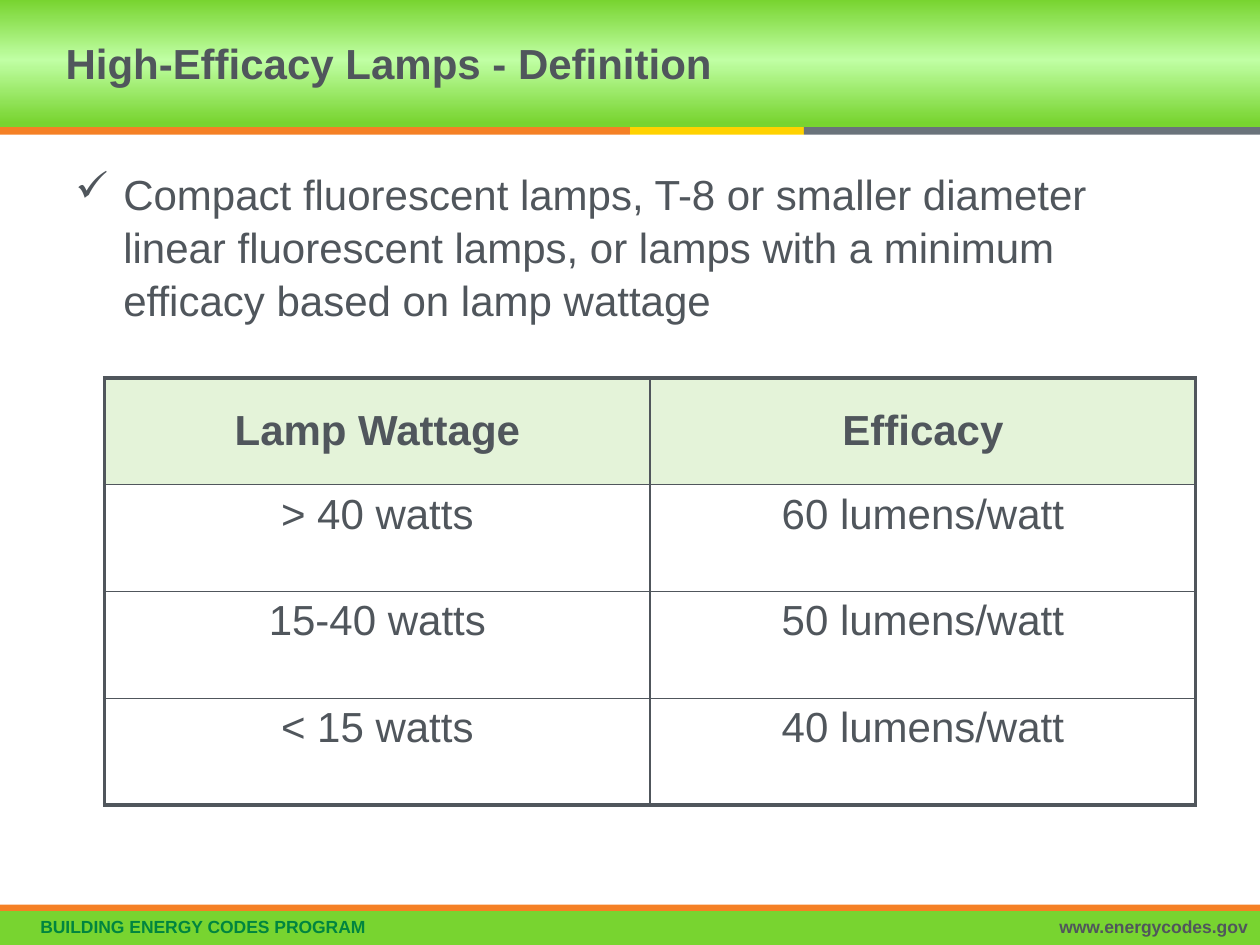
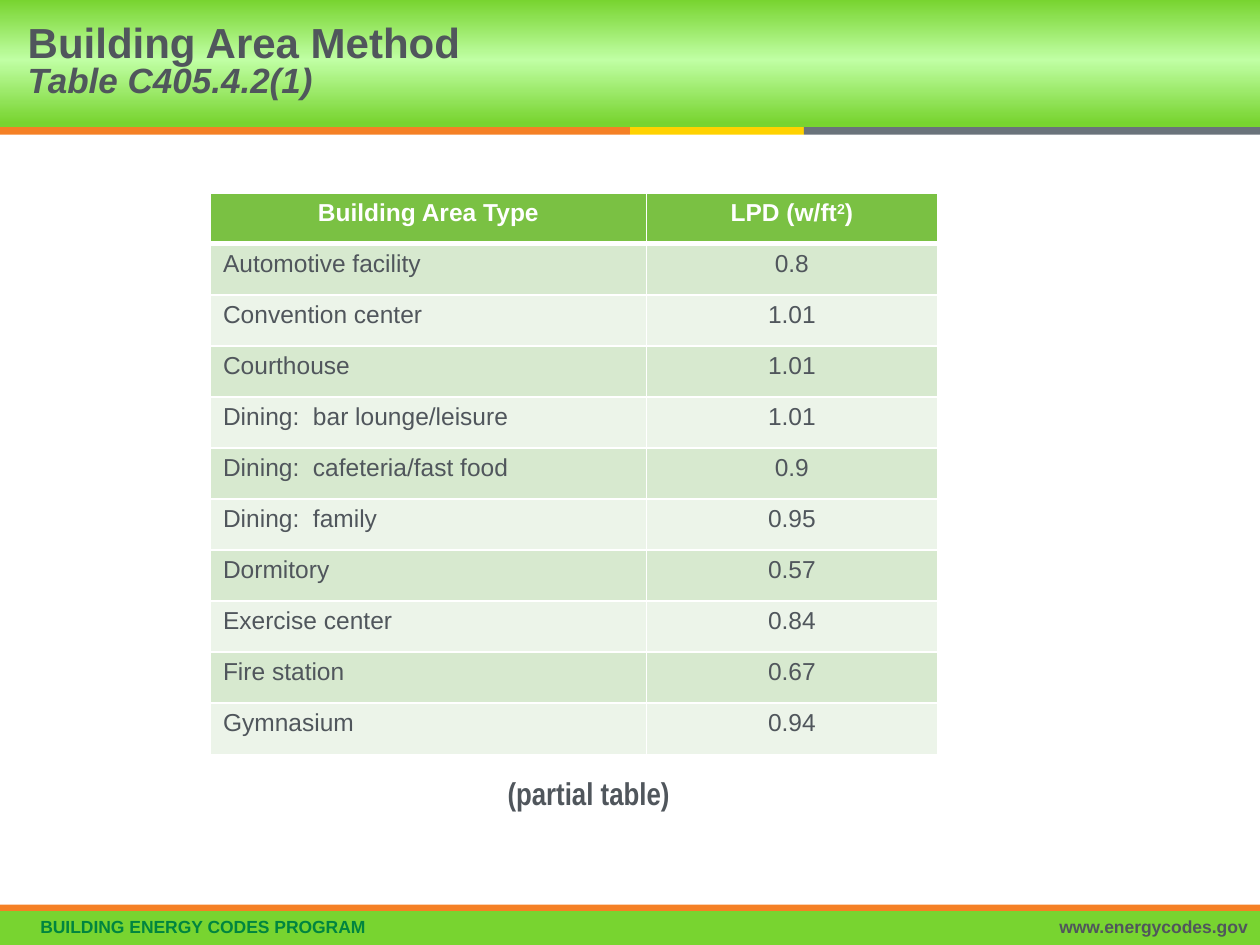
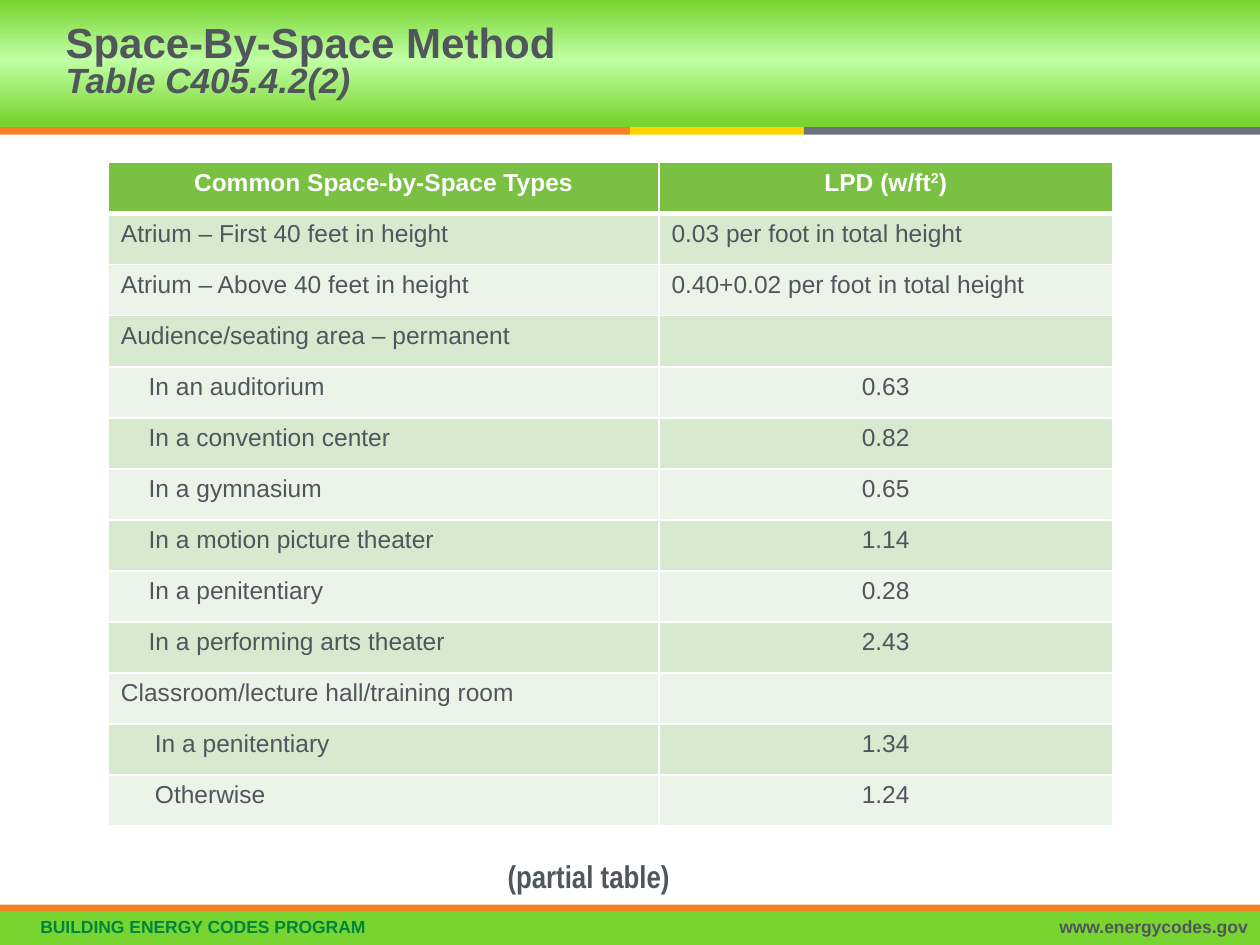
"""Build three slides on lamp efficacy and lighting power density tables."""
from dataclasses import dataclass

from lxml.etree import SubElement
from pptx import Presentation
from pptx.dml.color import RGBColor
from pptx.enum.shapes import MSO_SHAPE
from pptx.enum.text import MSO_ANCHOR, PP_ALIGN
from pptx.oxml.ns import qn
from pptx.util import Inches, Pt

COLORS = {
    "text": "50565C", "white": "FFFFFF", "green": "78D430", "glow": "C0FFA4",
    "orange": "F58025", "yellow": "FFD200", "gray": "6A737B", "program": "00853F",
    "lamp_header": "E4F3D9", "header": "7AC143", "band_dark": "D7E9CF", "band_light": "ECF4E9",
}
TITLE_ONLY = 5
LPD_HEADING = "LPD (w/ft²)"


@dataclass(frozen=True)
class Bar:
    left: float
    top: float
    width: float
    height: float
    color: str


@dataclass(frozen=True)
class Label:
    text: str
    left: float
    top: float
    width: float
    height: float
    size: float
    color: str = "text"
    font: str = "Arial"
    bold: bool = True
    align: PP_ALIGN = PP_ALIGN.LEFT
    spacing: float = 0.9
    inset: float = 0.1


@dataclass(frozen=True)
class Title:
    text: str
    left: float
    width: float
    subtitle: str = ""


@dataclass(frozen=True)
class Grid:
    left: float
    top: float
    height: float
    columns: tuple[float, ...]
    rows: list[tuple[str, str]]


@dataclass(frozen=True)
class Border:
    color: str
    width: float


BARS = [
    Bar(0, 7.23, 10, 0.27, "green"),
    Bar(0, 1.01, 5, 0.06, "orange"),
    Bar(5, 1.01, 1.38, 0.06, "yellow"),
    Bar(6.38, 1.01, 3.62, 0.06, "gray"),
    Bar(0, 7.18, 10, 0.05, "orange"),
]
FOOTERS = [
    Label("BUILDING ENERGY CODES PROGRAM", 0.07, 7.24, 7.97, 0.26, 10, "program", inset=0.25),
    Label("www.energycodes.gov", 5.99, 7.24, 4.01, 0.26, 10, align=PP_ALIGN.RIGHT),
]
DEFINITION = Label(
    "Compact fluorescent lamps, T-8 or smaller diameter linear fluorescent lamps, "
    "or lamps with a minimum efficacy based on lamp wattage",
    0.5, 1.27, 9.11, 2.53, 24, bold=False, spacing=1.05,
)
LAMPS = Grid(0.83, 3, 3.39, (4.33, 4.33), [
    ("Lamp Wattage", "Efficacy"),
    ("> 40 watts", "60 lumens/watt"),
    ("15-40 watts", "50 lumens/watt"),
    ("< 15 watts", "40 lumens/watt"),
])
BUILDING_AREAS = Grid(1.67, 1.53, 4.46, (3.46, 2.31), [
    ("Building Area Type", LPD_HEADING),
    ("Automotive facility", "0.8"),
    ("Convention center", "1.01"),
    ("Courthouse", "1.01"),
    ("Dining:  bar lounge/leisure", "1.01"),
    ("Dining:  cafeteria/fast food", "0.9"),
    ("Dining:  family", "0.95"),
    ("Dormitory", "0.57"),
    ("Exercise center", "0.84"),
    ("Fire station", "0.67"),
    ("Gymnasium", "0.94"),
])
SPACES = Grid(0.86, 1.29, 5.27, (4.37, 3.6), [
    ("Common Space-by-Space Types", LPD_HEADING),
    ("Atrium – First 40 feet in height", "0.03 per foot in total height"),
    ("Atrium – Above 40 feet in height", "0.40+0.02 per foot in total height"),
    ("Audience/seating area – permanent", ""),
    ("In an auditorium", "0.63"),
    ("In a convention center", "0.82"),
    ("In a gymnasium", "0.65"),
    ("In a motion picture theater", "1.14"),
    ("In a penitentiary", "0.28"),
    ("In a performing arts theater", "2.43"),
    ("Classroom/lecture hall/training room", ""),
    ("In a penitentiary", "1.34"),
    ("Otherwise", "1.24"),
])
SPACE_INDENTS = {**dict.fromkeys(range(4, 10), 0.22), 11: 0.27, 12: 0.27}


def rgb(name: str) -> RGBColor:
    return RGBColor.from_string(COLORS[name])


def set_font(paragraph, size: float, color: str = "text", bold: bool = False, name: str = "Arial") -> None:
    font = paragraph.font
    font.name, font.size, font.bold = name, Pt(size), bold
    font.color.rgb = rgb(color)


def add_bar(slide, bar: Bar):
    shape = slide.shapes.add_shape(
        MSO_SHAPE.RECTANGLE, *map(Inches, (bar.left, bar.top, bar.width, bar.height)))
    shape.shadow.inherit = False
    shape.line.fill.background()
    shape.fill.solid()
    shape.fill.fore_color.rgb = rgb(bar.color)
    return shape


def add_title_band(slide) -> None:
    shape = add_bar(slide, Bar(-0.03, 0, 10.03, 1.01, "green"))
    shape.fill.gradient()
    shape.fill.gradient_angle = 270
    stops = shape.element.spPr.find(qn("a:gradFill")).find(qn("a:gsLst"))
    for stop in list(stops):
        stops.remove(stop)
    for percent, color in ((0, "green"), (47, "glow"), (97, "green")):
        stop = SubElement(stops, qn("a:gs"), pos=str(percent * 1000))
        SubElement(stop, qn("a:srgbClr"), val=COLORS[color])


def add_label(slide, label: Label, bullet: str = "") -> None:
    box = slide.shapes.add_textbox(
        *map(Inches, (label.left, label.top, label.width, label.height)))
    frame = box.text_frame
    frame.word_wrap = True
    frame.margin_left = Inches(label.inset)
    paragraph = frame.paragraphs[0]
    paragraph.text = label.text
    paragraph.alignment = label.align
    paragraph.line_spacing = label.spacing
    if bullet:
        properties = paragraph._p.get_or_add_pPr()
        properties.set("marL", str(Inches(0.38)))
        properties.set("indent", str(-Inches(0.38)))
        SubElement(properties, qn("a:buChar"), char=bullet)
    set_font(paragraph, label.size, label.color, label.bold, label.font)


def set_title(slide, title: Title) -> None:
    shape = slide.shapes.title
    shape.left, shape.top = Inches(title.left), Inches(0)
    shape.width, shape.height = Inches(title.width), Inches(1.01)
    shape.element.getparent().append(shape.element)
    frame = shape.text_frame
    frame.vertical_anchor = MSO_ANCHOR.MIDDLE
    paragraph = frame.paragraphs[0]
    paragraph.text = title.text
    paragraph.alignment = PP_ALIGN.LEFT
    paragraph.line_spacing = 0.8 if title.subtitle else Pt(28)
    set_font(paragraph, 24, bold=True)
    if title.subtitle:
        paragraph.add_line_break()
        SubElement(paragraph._p[-1], qn("a:rPr"), sz="2400")
        run = paragraph.add_run()
        run.text = title.subtitle
        run.font.size, run.font.italic = Pt(20), True


def add_slide(presentation, title: Title):
    slide = presentation.slides.add_slide(presentation.slide_layouts[TITLE_ONLY])
    add_title_band(slide)
    for bar in BARS:
        add_bar(slide, bar)
    for footer in FOOTERS:
        add_label(slide, footer)
    set_title(slide, title)
    return slide


def add_grid(slide, grid: Grid):
    frame = slide.shapes.add_table(
        len(grid.rows), len(grid.columns), Inches(grid.left), Inches(grid.top),
        Inches(sum(grid.columns)), Inches(grid.height))
    table = frame.table
    table.first_row = table.horz_banding = False
    for column, width in zip(table.columns, grid.columns):
        column.width = Inches(width)
    return table


def set_borders(cell, left: Border, right: Border, top: Border, bottom: Border) -> None:
    properties = cell._tc.get_or_add_tcPr()
    for side, border in zip("LRTB", (left, right, top, bottom)):
        line = SubElement(properties, qn(f"a:ln{side}"), w=str(Pt(border.width)))
        fill = SubElement(line, qn("a:solidFill"))
        SubElement(fill, qn("a:srgbClr"), val=COLORS[border.color])


def fill_cell(cell, color: str) -> None:
    cell.fill.solid()
    cell.fill.fore_color.rgb = rgb(color)


def write_cell(cell, text: str, size: float, color: str, bold: bool, centered: bool) -> None:
    paragraph = cell.text_frame.paragraphs[0]
    base, raised, rest = text.partition("²")
    paragraph.text = base
    if raised:
        exponent = paragraph.add_run()
        exponent.text = "2"
        exponent.font._element.set("baseline", "30000")
        paragraph.add_run().text = rest
    paragraph.alignment = PP_ALIGN.CENTER if centered else PP_ALIGN.LEFT
    set_font(paragraph, size, color, bold)


def add_lamp_table(slide) -> None:
    table = add_grid(slide, LAMPS)
    outer, inner = Border("text", 2.25), Border("text", 1)
    last_row, last_column = len(LAMPS.rows) - 1, len(LAMPS.columns) - 1
    for row, texts in enumerate(LAMPS.rows):
        for column, text in enumerate(texts):
            cell = table.cell(row, column)
            cell.margin_left = cell.margin_right = Inches(0.16)
            set_borders(
                cell,
                outer if column == 0 else inner,
                outer if column == last_column else inner,
                outer if row == 0 else inner,
                outer if row == last_row else inner)
            if row == 0:
                cell.vertical_anchor = MSO_ANCHOR.MIDDLE
                fill_cell(cell, "lamp_header")
            else:
                cell.fill.background()
            write_cell(cell, text, 24, "text", row == 0, True)


def add_density_table(slide, grid: Grid, indents: dict[int, float]) -> None:
    table = add_grid(slide, grid)
    thin, thick = Border("white", 1), Border("white", 3)
    for row, texts in enumerate(grid.rows):
        header = row == 0
        band = "header" if header else "band_dark" if row % 2 else "band_light"
        for column, text in enumerate(texts):
            cell = table.cell(row, column)
            set_borders(cell, thin, thin, thick if row == 1 else thin, thick if header else thin)
            fill_cell(cell, band)
            if column == 0 and row in indents:
                cell.margin_left = Inches(0.1 + indents[row])
            if text:
                centered = header or (column == 1 and "per foot" not in text)
                write_cell(cell, text, 14, "white" if header else "text", header, centered)


def add_partial_note(slide, top: float) -> None:
    add_label(slide, Label(
        "(partial table)", 3.93, top, 3.2, 0.35, 18, font="Arial Narrow", spacing=0.8))


def main() -> None:
    presentation = Presentation()
    presentation.slide_width, presentation.slide_height = Inches(10), Inches(7.5)

    slide = add_slide(presentation, Title("High-Efficacy Lamps - Definition", 0.42, 5.97))
    add_lamp_table(slide)
    add_label(slide, DEFINITION, bullet="✓")

    slide = add_slide(presentation, Title("Building Area Method", 0.12, 6.66, "Table C405.4.2(1)"))
    add_density_table(slide, BUILDING_AREAS, {})
    add_partial_note(slide, 6.15)

    slide = add_slide(presentation, Title("Space-By-Space Method", 0.42, 5.97, "Table C405.4.2(2)"))
    add_density_table(slide, SPACES, SPACE_INDENTS)
    add_partial_note(slide, 6.81)

    presentation.save("out.pptx")


if __name__ == "__main__":
    main()
